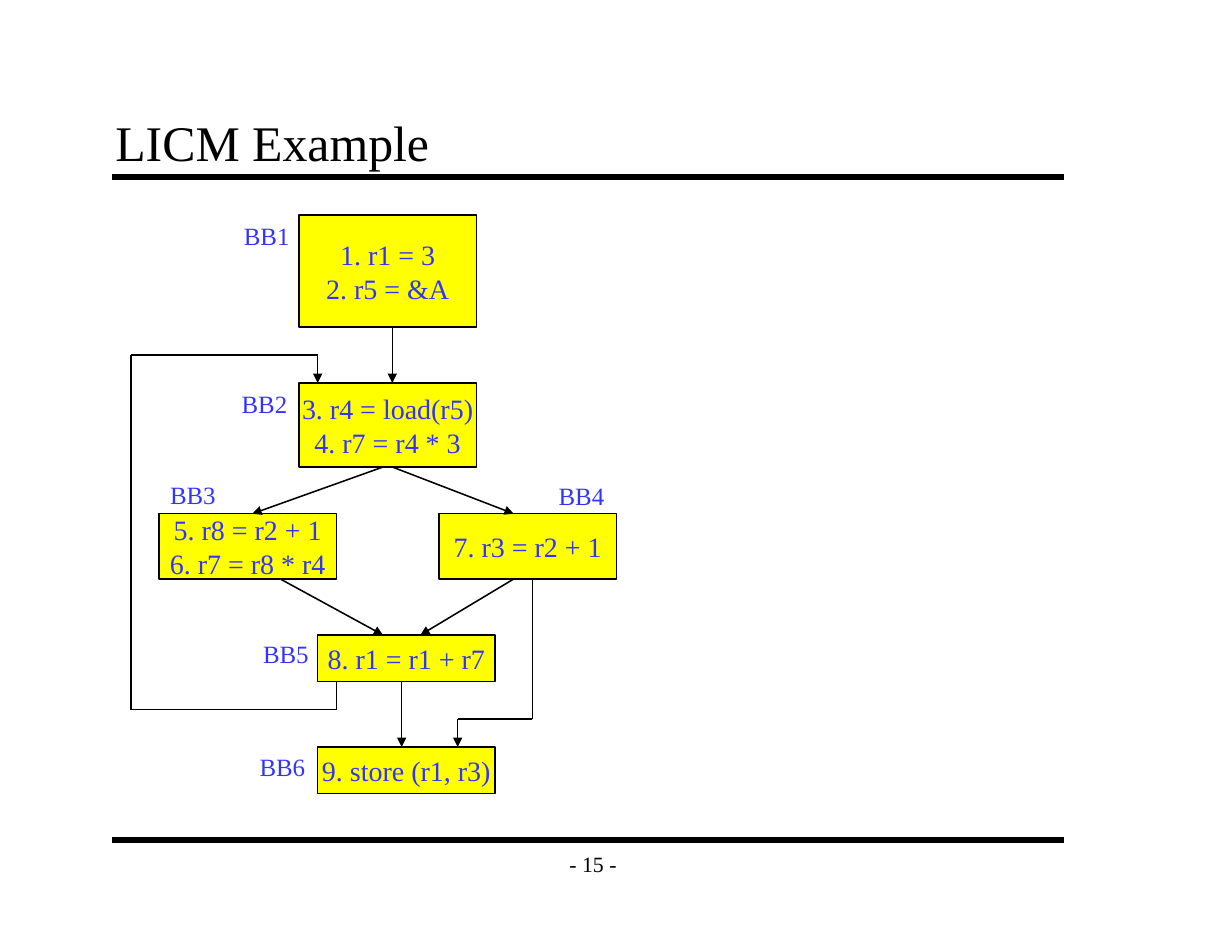
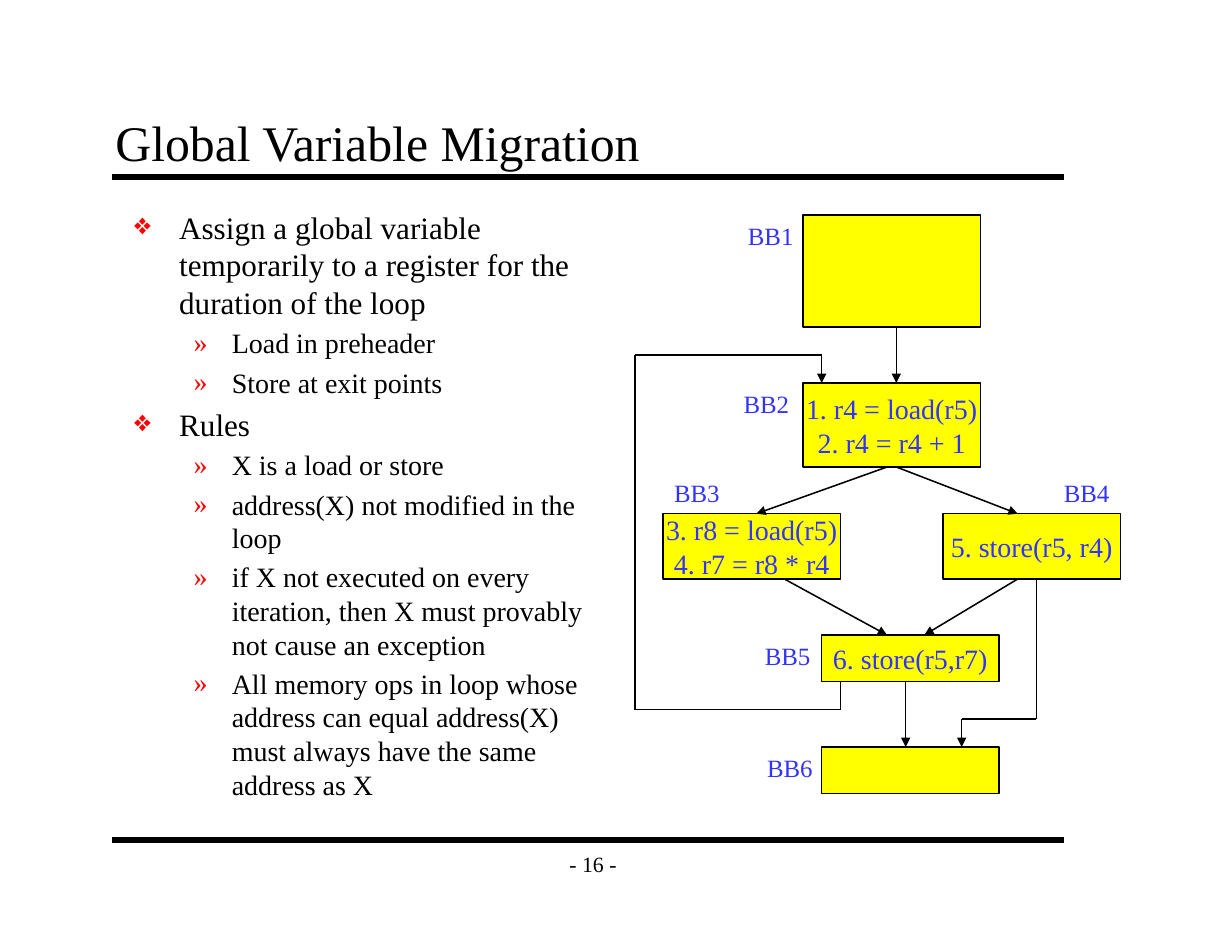
from itertools import pairwise

from lxml.etree import SubElement as Sub
from pptx import Presentation
from pptx.dml.color import RGBColor as Rgb
from pptx.enum.shapes import MSO_CONNECTOR as Conn, MSO_SHAPE as Shape
from pptx.enum.text import MSO_ANCHOR as Anchor, MSO_AUTO_SIZE as Fit, PP_ALIGN as Align
from pptx.oxml.ns import qn
from pptx.util import Inches, Pt

HUES = {"ink": "000000", "code": "3333FF", "block": "FFFF00", "mark": "FF0000"}
FONT = "Times New Roman"
PADS = {"margin_left": Inches(0.11), "margin_right": Inches(0.11),
        "margin_top": Inches(0.06), "margin_bottom": Inches(0.06)}
SIZES = [20, 18]
BULLETS = [("❖", 0.41, 0.41, 75), ("»", 0.88, 0.34, 100)]  # sign, indent, hang, percent

# The flow graph lies on a grid of twelfths of an inch: left, top, width, height.
BLOCKS = [(18, 0, 19, 12), (18, 18, 19, 9), (3, 32, 19, 7),
          (33, 32, 19, 7), (20, 45, 19, 5), (20, 57, 19, 5)]
ROUTES = [
    [(28, 12), (28, 18)],
    [(27, 27), (13, 32)],
    [(28, 27), (41, 32)],
    [(16, 39), (27, 45)],
    [(41, 39), (31, 45)],
    [(29, 50), (29, 57)],
    [(22, 50), (22, 53), (0, 53), (0, 15), (20, 15), (20, 18)],
    [(43, 39), (43, 54), (35, 54), (35, 57)],
]

LICM = ["1. r1 = 3\n2. r5 = &A", "3. r4 = load(r5)\n4. r7 = r4 * 3",
        "5. r8 = r2 + 1\n6. r7 = r8 * r4", "7. r3 = r2 + 1",
        "8. r1 = r1 + r7", "9. store (r1, r3)"]
LICM_TAGS = [(0.91, 0), (0.89, 1.5), (0.25, 2.31), (3.72, 2.32), (1.08, 3.73), (1.05, 4.74)]

MOVE = ["", "1. r4 = load(r5)\n2. r4 = r4 + 1", "3. r8 = load(r5)\n4. r7 = r8 * r4",
        "5. store(r5, r4)", "6. store(r5,r7)", ""]
MOVE_TAGS = [(0.91, 0), (0.87, 1.5), (0.25, 2.3), (3.73, 2.3), (1.06, 3.75), (1.08, 4.75)]
POINTS = [
    (0, "Assign a global variable temporarily to a register for the duration of the loop"),
    (1, "Load in preheader"),
    (1, "Store at exit points"),
    (0, "Rules"),
    (1, "X is a load or store"),
    (1, "address(X) not modified in the loop"),
    (1, "if X not executed on every iteration, then X must provably not cause an exception"),
    (1, "All memory ops in loop whose address can equal address(X) "
        "must always have the same address as X"),
]


def apply(item, form):
    for key, val in form.items():
        setattr(item, key, val)


def place(shape, box):
    apply(shape, dict(zip(("left", "top", "width", "height"), map(Inches, box))))


def write(shape, text, size, hue="ink", align=Align.LEFT, **form):
    """Fill a shape with text, one paragraph a line."""
    frame = shape.text_frame
    frame.text = text
    apply(frame, {"auto_size": Fit.NONE, **form})
    for para in frame.paragraphs:
        para.alignment = align
        style(para, size, hue)


def style(para, size, hue="ink"):
    for run in para.runs:
        apply(run.font, {"name": FONT, "size": Pt(size)})
        run.font.color.rgb = Rgb.from_string(HUES[hue])


def draw_line(slide, start, end, width=1, arrow=False):
    line = slide.shapes.add_connector(Conn.STRAIGHT, *map(Inches, (*start, *end)))
    line.line.width = Pt(width)
    line.line.color.rgb = Rgb.from_string(HUES["ink"])
    if arrow:
        Sub(line.line._get_or_add_ln(), qn("a:tailEnd"), type="triangle")
    Sub(line._element.spPr, qn("a:effectLst"))


def add_text(slide, box, text, size, **form):
    area = slide.shapes.add_textbox(*map(Inches, box))
    write(area, text, size, **form)


def add_frame(deck, layout, title, page):
    """Add a slide with its title, two rules and page number."""
    slide = deck.slides.add_slide(deck.slide_layouts[layout])
    for y in (1.58, 7.5):
        draw_line(slide, (1, y), (9.5, y), 4)
    add_text(slide, (4.92, 7.5, 0.75, 0.42), f"- {page} -", 14, align=Align.CENTER,
             vertical_anchor=Anchor.MIDDLE, word_wrap=False, **PADS)
    head = slide.shapes.title
    place(head, (0.92, 0.92, 8.5, 0.67))
    write(head, title, 32, vertical_anchor=Anchor.BOTTOM, **PADS)
    return slide


def add_block(slide, box, code):
    block = slide.shapes.add_shape(Shape.RECTANGLE, *map(Inches, box))
    block.shadow.inherit = False
    block.fill.solid()
    block.fill.fore_color.rgb = Rgb.from_string(HUES["block"])
    block.line.color.rgb = Rgb.from_string(HUES["ink"])
    block.line.width = Pt(1)
    if code:
        write(block, code, 18, "code", Align.CENTER,
              vertical_anchor=Anchor.MIDDLE, word_wrap=False)


def add_flow(slide, left, top, codes, tags):
    """Draw the six basic blocks, their edges and their labels."""
    def spot(x, y):
        return left + x / 12, top + y / 12

    for (x, y, wide, high), code in zip(BLOCKS, codes):
        add_block(slide, (*spot(x, y), wide / 12, high / 12), code)
    for route in ROUTES:
        for start, end in pairwise(route):
            draw_line(slide, spot(*start), spot(*end), arrow=end == route[-1])
    for num, (x, y) in enumerate(tags, 1):
        add_text(slide, (left + x, top + y, 0.61, 0.37), f"BB{num}", 16,
                 hue="code", word_wrap=False)


def add_bullet(para, level):
    sign, indent, hang, scale = BULLETS[level]
    props = para._p.get_or_add_pPr()
    props.set("marL", str(Inches(indent)))
    props.set("indent", str(-Inches(hang)))
    space = Sub(props, qn("a:spcBef"))
    Sub(space, qn("a:spcPct"), val="20000")
    Sub(Sub(props, qn("a:buClr")), qn("a:srgbClr"), val=HUES["mark"])
    Sub(props, qn("a:buSzPct"), val=str(scale * 1000))
    Sub(props, qn("a:buFont"), typeface=FONT)
    Sub(props, qn("a:buChar"), char=sign)


def add_list(slide, box, points):
    body = slide.placeholders[1]
    place(body, box)
    frame = body.text_frame
    frame.text = "\n".join(text for _, text in points)
    apply(frame, {"auto_size": Fit.NONE, "vertical_anchor": Anchor.TOP, **PADS})
    for para, (level, _) in zip(frame.paragraphs, points):
        para.level = level
        style(para, SIZES[level])
        add_bullet(para, level)


def main():
    deck = Presentation()
    apply(deck, {"slide_width": Inches(11), "slide_height": Inches(8.5)})

    slide = add_frame(deck, 5, "LICM Example", 15)
    add_flow(slide, 1.17, 1.92, LICM, LICM_TAGS)

    slide = add_frame(deck, 1, "Global Variable Migration", 16)
    add_list(slide, (1.08, 1.8, 4.42, 5.7), POINTS)
    add_flow(slide, 5.67, 1.92, MOVE, MOVE_TAGS)

    deck.save("out.pptx")


if __name__ == "__main__":
    main()
